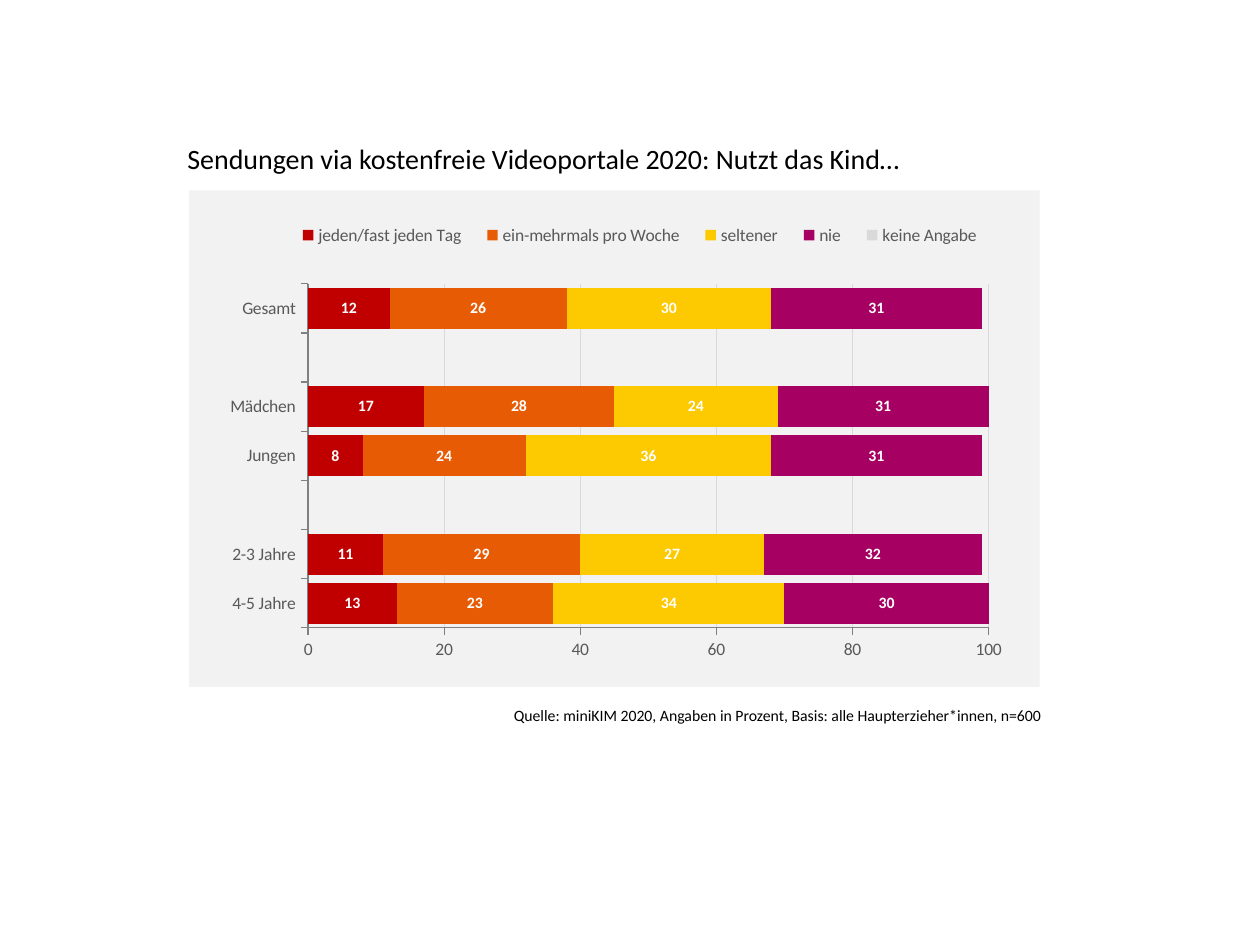
from lxml import etree
from pptx import Presentation
from pptx.chart.data import CategoryChartData
from pptx.dml.color import RGBColor
from pptx.enum.chart import (XL_CHART_TYPE as CT, XL_LABEL_POSITION as LP,
                             XL_LEGEND_POSITION as LG, XL_TICK_MARK as TM)
from pptx.enum.text import MSO_ANCHOR as MA, PP_ALIGN as PA
from pptx.oxml import parse_xml
from pptx.oxml.ns import nsdecls, qn
from pptx.util import Cm, Pt

CATS = ["4-5 Jahre", "2-3 Jahre", "", "Jungen", "Mädchen", "", "Gesamt"]
SERIES = [
    ("jeden/fast jeden Tag", "C00000", [13, 11, None, 8, 17, None, 12]),
    ("ein-mehrmals pro Woche", "E65B03", [23, 29, None, 24, 28, None, 26]),
    ("seltener", "FDC900", [34, 27, None, 36, 24, None, 30]),
    ("nie", "A60063", [30, 32, None, 31, 31, None, 31]),
    ("keine Angabe", "D9D9D9", [0, 0, None, 0, 0, None, 0]),
]


def rgb(value):
    return RGBColor.from_string(value)


def layout(x, y, w, h, inner=False):
    """Manual chart layout, as fractions of the chart area."""
    el = etree.Element(qn("c:layout"))
    manual = etree.SubElement(el, qn("c:manualLayout"))
    parts = [("layoutTarget", "inner")] if inner else []
    parts += [("xMode", "edge"), ("yMode", "edge"),
              ("x", x), ("y", y), ("w", w), ("h", h)]
    for tag, val in parts:
        etree.SubElement(manual, qn("c:" + tag)).set("val", str(val))
    return el


class Deck:
    font, text, muted = "Calibri", "000000", "595959"
    axis, grid, panel = "808080", "D9D9D9", "F2F2F2"

    def __init__(self):
        self.prs = Presentation()
        self.prs.slide_width, self.prs.slide_height = Cm(25.4), Cm(19.05)
        self.s = self.prs.slides.add_slide(self.prs.slide_layouts[6])

    def style(self, font, size, color, bold=False):
        for name, val in {"name": self.font, "size": Pt(size), "bold": bold}.items():
            setattr(font, name, val)
        font.color.rgb = rgb(color)

    def line(self, fmt, color):
        fmt.line.width = Pt(0.75)
        fmt.line.color.rgb = rgb(color)

    def textbox(self, text, box, size, align=PA.LEFT, anchor=MA.TOP):
        tf = self.s.shapes.add_textbox(*map(Cm, box)).text_frame
        tf.word_wrap, tf.vertical_anchor = True, anchor
        p = tf.paragraphs[0]
        p.alignment, p.line_spacing = align, 0.9
        r = p.add_run()
        r.text = text
        self.style(r.font, size, self.text)

    def stacked_bars(self, cats, series, box):
        data = CategoryChartData(number_format="0")
        data.categories = cats
        for name, _, vals in series:
            data.add_series(name, vals)
        chart = self.s.shapes.add_chart(CT.BAR_STACKED, *map(Cm, box), data).chart
        chart.has_title = False
        self.style(chart.font, 10, self.text)

        # Bars and value labels
        plot = chart.plots[0]
        plot.gap_width, plot.overlap, plot.vary_by_categories = 20, 100, False
        for ser, (_, color, vals) in zip(plot.series, series):
            ser.format.fill.solid()
            ser.format.fill.fore_color.rgb = rgb(color)
            if any(vals):
                labels = ser.data_labels
                for name, val in {"show_value": True, "position": LP.CENTER,
                                  "number_format": "0",
                                  "number_format_is_linked": False}.items():
                    setattr(labels, name, val)
                self.style(labels.font, 9, "FFFFFF", True)

        # Axes
        for ax in (chart.category_axis, chart.value_axis):
            ax.major_tick_mark, ax.minor_tick_mark = TM.OUTSIDE, TM.NONE
            self.style(ax.tick_labels.font, 10, self.muted)
            self.line(ax.format, self.axis)
        val_ax = chart.value_axis
        val_ax.minimum_scale, val_ax.maximum_scale, val_ax.major_unit = 0, 100, 20
        val_ax.tick_labels.number_format = "0"
        val_ax.tick_labels.number_format_is_linked = False
        val_ax.has_major_gridlines = True
        self.line(val_ax.major_gridlines.format, self.grid)

        # Legend
        chart.has_legend = True
        legend = chart.legend
        legend.position, legend.include_in_layout = LG.TOP, False
        self.style(legend.font, 10, self.muted)

        # Panel fill and placement of the parts
        root = chart.element
        body = root.find(qn("c:chart"))
        body.addnext(parse_xml(
            f'<c:spPr {nsdecls("c", "a")}><a:solidFill><a:srgbClr val="{self.panel}"/>'
            '</a:solidFill><a:ln><a:noFill/></a:ln></c:spPr>'))
        area = body.find(qn("c:plotArea"))
        for old in area.findall(qn("c:layout")):
            area.remove(old)
        area.insert(0, layout(0.14, 0.188, 0.8, 0.693, inner=True))
        leg = body.find(qn("c:legend"))
        for old in leg.findall(qn("c:layout")):
            leg.remove(old)
        leg.find(qn("c:legendPos")).addnext(layout(0.11, 0.06, 0.84, 0.06))


def main():
    deck = Deck()
    # Title
    deck.textbox("Sendungen via kostenfreie Videoportale 2020: Nutzt das Kind…",
                 (3.53, 2.74, 17.42, 0.97), 16, anchor=MA.MIDDLE)
    # Chart
    deck.stacked_bars(CATS, SERIES, (3.81, 3.84, 17.15, 10.01))
    # Source note
    deck.textbox("Quelle: miniKIM 2020, Angaben in Prozent, "
                 "Basis: alle Haupterzieher*innen, n=600",
                 (7.95, 14.15, 13.28, 0.61), 9, align=PA.RIGHT)
    deck.prs.save("out.pptx")


if __name__ == "__main__":
    main()
